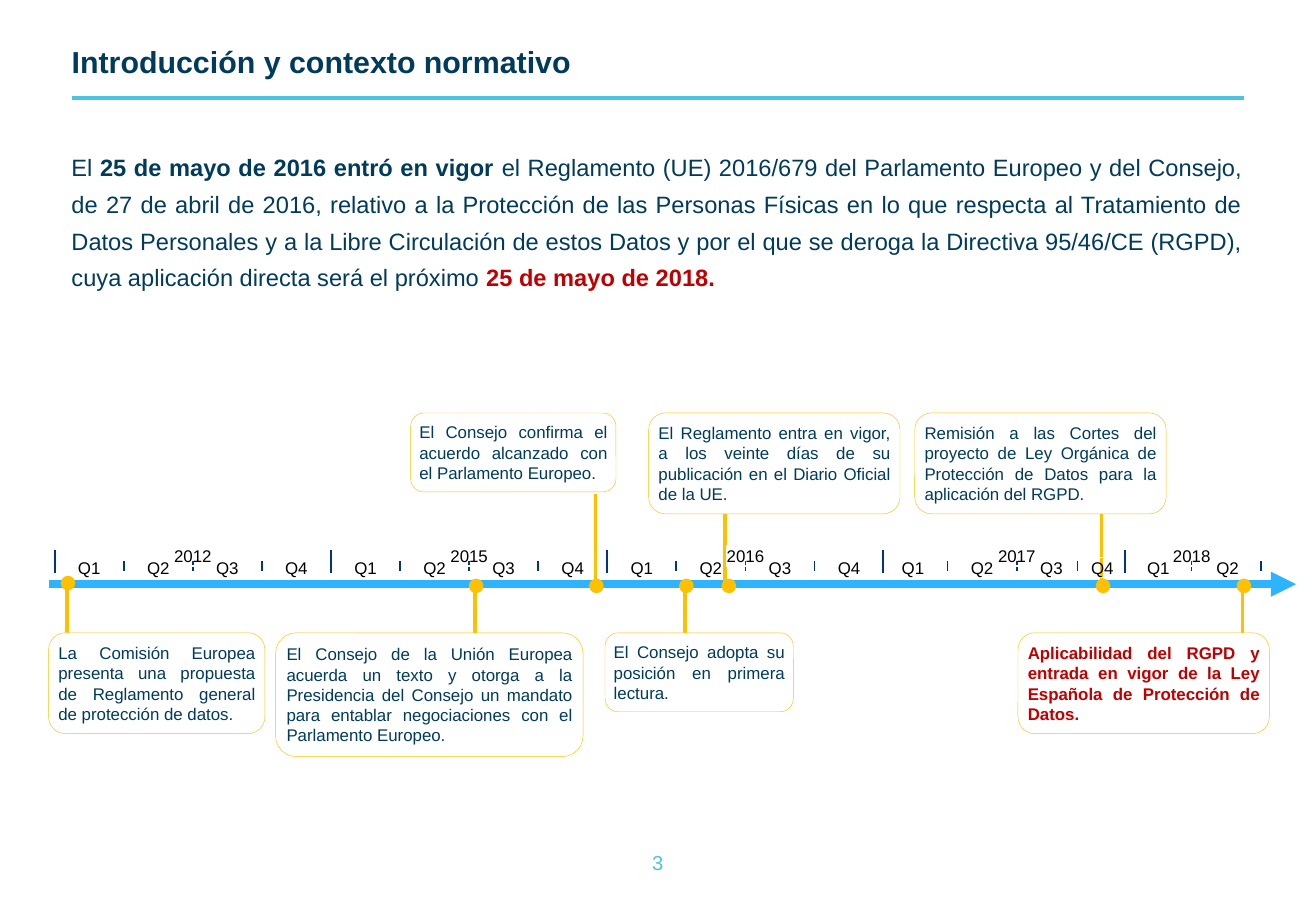
"""Build the slide on the regulatory context of data protection."""
from dataclasses import dataclass

from lxml.etree import SubElement
from pptx import Presentation
from pptx.dml.color import RGBColor
from pptx.enum.shapes import MSO_CONNECTOR, MSO_SHAPE
from pptx.enum.text import MSO_ANCHOR, MSO_AUTO_SIZE, PP_ALIGN
from pptx.oxml.ns import qn
from pptx.util import Pt


@dataclass(frozen=True)
class Theme:
    """Colours, font and type sizes."""
    font: str = "Arial"
    navy: str = "003B5C"
    red: str = "C00000"
    teal: str = "4EC3E0"
    sky: str = "2EB4FF"
    amber: str = "FFC000"
    tick: str = "00338D"
    black: str = "000000"
    white: str = "FFFFFF"
    title: float = 18
    body: float = 14
    number: float = 12
    small: float = 10


@dataclass(frozen=True)
class Milestone:
    """An event on the timeline, with its card."""
    dot: float
    stem: float
    left: float
    width: float
    height: float
    above: bool
    text: str
    key: bool = False
    dot_y: float = 347.3


THEME = Theme()
AXIS_Y = 346.3
DOT = 8.64
CARD_TOP = {True: 244.8, False: 375.1}
STEM_END = {True: 293, False: 384}
QUARTER = 40.94
FIRST_TICK = 32.4
LAST_TICK = 747.4
MAJOR_TICK = (326.2, 339.8)
MINOR_TICK = (332.6, 338.4)

INTRO = [
    ("El ", THEME.navy, False),
    ("25 de mayo de 2016 entró en vigor ", THEME.navy, True),
    ("el Reglamento (UE) 2016/679 del Parlamento Europeo y del Consejo, de 27 de abril de 2016, "
     "relativo a la Protección de las Personas Físicas en lo que respecta al Tratamiento de Datos "
     "Personales y a la Libre Circulación de estos Datos y por el que se deroga la Directiva "
     "95/46/CE (RGPD), cuya aplicación directa será el próximo ", THEME.navy, False),
    ("25 de mayo de 2018.", THEME.red, True),
]

MILESTONES = [
    Milestone(40.3, 39.6, 28.8, 128.2, 59.8, False,
              "La Comisión Europea presenta una propuesta de Reglamento general de protección "
              "de datos.", dot_y=345.6),
    Milestone(282.2, 281.5, 163.4, 182.2, 73.4, False,
              "El Consejo de la Unión Europea acuerda un texto y otorga a la Presidencia del "
              "Consejo un mandato para entablar negociaciones con el Parlamento Europeo."),
    Milestone(353.5, 352.8, 243.4, 121.7, 46.8, True,
              "El Consejo confirma el acuerdo alcanzado con el Parlamento Europeo."),
    Milestone(406.8, 406.1, 358.6, 111.6, 46.8, False,
              "El Consejo adopta su posición en primera lectura."),
    Milestone(432, 429.8, 384.5, 149, 59.8, True,
              "El Reglamento entra en vigor, a los veinte días de su publicación en el Diario "
              "Oficial de la\u00a0UE."),
    Milestone(653.8, 653, 542.2, 149, 59.8, True,
              "Remisión a las Cortes del proyecto de Ley Orgánica de Protección de Datos para "
              "la aplicación del RGPD."),
    Milestone(737.3, 736.6, 603.4, 149, 59.8, False,
              "Aplicabilidad del RGPD y entrada en vigor de la Ley Española de Protección de "
              "Datos.", key=True),
]


def apply(target, values):
    """Set each attribute named in values on target."""
    for name, value in values.items():
        setattr(target, name, value)


def write(frame, runs, size, frame_format, paragraph_format):
    """Fill a text frame with one paragraph of (text, colour, bold) runs."""
    apply(frame, frame_format)
    paragraph = frame.paragraphs[0]
    apply(paragraph, paragraph_format)
    for text, colour, bold in runs:
        run = paragraph.add_run()
        run.text = text
        apply(run.font, {"name": THEME.font, "size": Pt(size), "bold": bold})
        run.font.color.rgb = RGBColor.from_string(colour)


def margins(size):
    """Return equal inner margins for a text frame."""
    return {f"margin_{side}": Pt(size) for side in ("left", "top", "right", "bottom")}


def add_rule(slide, start, end, colour, width, arrow=False):
    """Draw a straight line, with an arrowhead if asked."""
    rule = slide.shapes.add_connector(MSO_CONNECTOR.STRAIGHT, *map(Pt, start + end))
    rule.line.color.rgb = RGBColor.from_string(colour)
    rule.line.width = Pt(width)
    properties = rule.element.spPr
    if arrow:
        SubElement(properties.find(qn("a:ln")), qn("a:tailEnd"), type="triangle")
    SubElement(properties, qn("a:effectLst"))


def add_block(slide, kind, box, fill=None, outline=None, width=0.75):
    """Draw a preset shape and return it."""
    block = slide.shapes.add_shape(kind, *map(Pt, box))
    block.shadow.inherit = False
    if fill:
        block.fill.solid()
        block.fill.fore_color.rgb = RGBColor.from_string(fill)
    else:
        block.fill.background()
    if outline:
        block.line.color.rgb = RGBColor.from_string(outline)
        block.line.width = Pt(width)
    else:
        block.line.fill.background()
    return block


def add_text(slide, box, runs, size, paragraph_format):
    """Add a wrapping text box."""
    frame = slide.shapes.add_textbox(*map(Pt, box)).text_frame
    write(frame, runs, size, {"word_wrap": True}, paragraph_format)


def add_title(slide, text):
    """Place and format the title and the rule beneath it."""
    title = slide.shapes.title
    apply(title, {"left": Pt(35.3), "top": Pt(10.1), "width": Pt(708.5), "height": Pt(41)})
    write(title.text_frame, [(text, THEME.navy, True)], THEME.title,
          {"vertical_anchor": MSO_ANCHOR.BOTTOM, "auto_size": MSO_AUTO_SIZE.NONE},
          {"alignment": PP_ALIGN.LEFT})
    add_rule(slide, (42.5, 58.3), (737.3, 58.3), THEME.teal, 2.25)


def add_label(slide, text, centre, top, width):
    """Add a quarter or year label centred over the axis."""
    label = add_block(slide, MSO_SHAPE.RECTANGLE, (centre - width / 2, top, width, 12.24),
                      outline=THEME.white)
    write(label.text_frame, [(text, THEME.black, False)], THEME.small,
          {"word_wrap": False, "vertical_anchor": MSO_ANCHOR.MIDDLE, **margins(0)},
          {"alignment": PP_ALIGN.CENTER})


def add_tick(slide, x, span):
    """Add a tick mark over the axis."""
    add_rule(slide, (x, span[0]), (x, span[1]), THEME.tick, 1)


def add_card(slide, event):
    """Add the rounded card of a milestone."""
    card = add_block(slide, MSO_SHAPE.ROUNDED_RECTANGLE,
                     (event.left, CARD_TOP[event.above], event.width, event.height),
                     THEME.white, THEME.amber, 0.25)
    colour = THEME.red if event.key else THEME.navy
    write(card.text_frame, [(event.text, colour, event.key)], THEME.small,
          {"word_wrap": True, "vertical_anchor": MSO_ANCHOR.MIDDLE, **margins(2.88)},
          {"alignment": PP_ALIGN.JUSTIFY})


def calendar():
    """Return each year with its tick positions and quarter centres."""
    years = []
    for index, year in enumerate(("2012", "2015", "2016")):
        ticks = [FIRST_TICK + QUARTER * (4 * index + quarter) for quarter in range(4)]
        years.append((year, ticks, [tick + QUARTER / 2 for tick in ticks]))
    years.append(("2017", [523.4, 561.6, 602.6, 638.6], [541.1, 582.1, 623.2, 653.4]))
    years.append(("2018", [666.7, 706.3], [686.5, 727.6]))
    return years


def add_timeline(slide):
    """Draw the axis, milestones and calendar."""
    add_rule(slide, (28.8, AXIS_Y), (768.2, AXIS_Y), THEME.sky, 5, arrow=True)
    for event in MILESTONES:
        add_rule(slide, (event.stem, AXIS_Y), (event.stem, STEM_END[event.above]), THEME.amber, 2)
        add_block(slide, MSO_SHAPE.OVAL,
                  (event.dot - DOT / 2, event.dot_y - DOT / 2, DOT, DOT), THEME.amber)
        add_card(slide, event)
    for year, ticks, centres in calendar():
        for quarter, (tick, centre) in enumerate(zip(ticks, centres), start=1):
            add_tick(slide, tick, MAJOR_TICK if quarter == 1 else MINOR_TICK)
            add_label(slide, f"Q{quarter}", centre, 330.3, 13.7)
        add_label(slide, year, ticks[len(ticks) // 2], 323.3, 22.3)
    add_tick(slide, LAST_TICK, MINOR_TICK)


def main():
    """Build and save the slide."""
    deck = Presentation()
    apply(deck, {"slide_width": Pt(780), "slide_height": Pt(540)})
    slide = deck.slides.add_slide(deck.slide_layouts[5])
    add_title(slide, "Introducción y contexto normativo")
    add_text(slide, (35.3, 82.1, 708.5, 95.8), INTRO, THEME.body,
             {"alignment": PP_ALIGN.JUSTIFY, "line_spacing": 1.3})
    add_timeline(slide)
    add_text(slide, (298.8, 500.4, 182.2, 28.8), [("3", THEME.teal, False)], THEME.number,
             {"alignment": PP_ALIGN.CENTER})
    deck.save("out.pptx")


if __name__ == "__main__":
    main()
